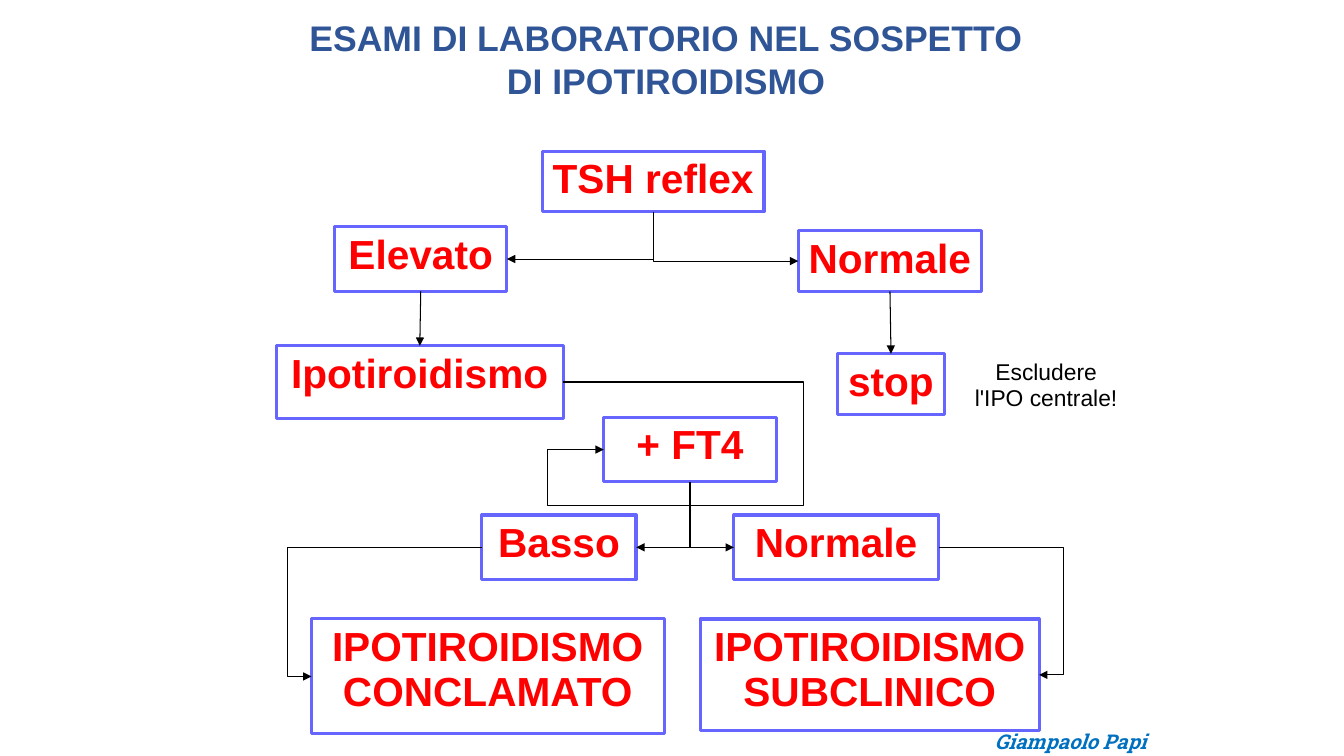
from lxml import etree
from pptx import Presentation
from pptx.dml.color import RGBColor
from pptx.enum.shapes import MSO_CONNECTOR as CONN, MSO_SHAPE
from pptx.enum.text import MSO_ANCHOR, PP_ALIGN
from pptx.oxml.ns import qn
from pptx.util import Pt


def color(hex_code):
    return RGBColor.from_string(hex_code)


def write(sp, lines, size, font, hex_code, bold=False, italic=False,
          align=PP_ALIGN.CENTER, spacing=None, wrap=True, inset=(7.2, 3.6)):
    tf = sp.text_frame
    tf.word_wrap = wrap
    tf.vertical_anchor = MSO_ANCHOR.TOP
    tf.margin_left = tf.margin_right = Pt(inset[0])
    tf.margin_top = tf.margin_bottom = Pt(inset[1])
    for i, line in enumerate(lines):
        p = tf.paragraphs[0] if i == 0 else tf.add_paragraph()
        p.alignment = align
        p.line_spacing = spacing
        r = p.add_run()
        r.text = line
        r.font.size, r.font.name = Pt(size), font
        r.font.bold, r.font.italic = bold, italic
        r.font.color.rgb = color(hex_code)


prs = Presentation()
prs.slide_width, prs.slide_height = Pt(960), Pt(540)
s = prs.slides.add_slide(prs.slide_layouts[6])

# Flowchart boxes: key, text, left, top, width, height, wrap
boxes = {}
for key, text, x, y, w, h, wrap in [
    ("tsh", "TSH reflex", 387.4, 108, 158.4, 43.2, False),
    ("high", "Elevato", 239, 162, 123.1, 46.1, True),
    ("normal", "Normale", 570.2, 164.9, 131, 43.2, False),
    ("hypo", "Ipotiroidismo", 197.3, 247, 205.2, 51.8, True),
    ("ft4", "+ FT4", 431.3, 298.1, 123.1, 46.1, True),
    ("ft4_low", "Basso", 344.2, 367.9, 110.2, 46.1, True),
    ("ft4_normal", "Normale", 524.2, 367.9, 146.2, 46.1, True),
    ("stop", "stop", 598.3, 252.7, 76.3, 43.2, False),
    ("overt", "IPOTIROIDISMO CONCLAMATO", 222.5, 442.1, 252, 82.1, True),
    ("subclinical", "IPOTIROIDISMO SUBCLINICO", 500.4, 442.1, 241.9, 79.9, True),
]:
    sp = s.shapes.add_shape(MSO_SHAPE.RECTANGLE, Pt(x), Pt(y), Pt(w), Pt(h))
    sp.shadow.inherit = False
    sp.fill.background()
    sp.line.color.rgb = color("6666FF")
    sp.line.width = Pt(2.3)
    write(sp, [text], 29, "Arial", "FF0000", bold=True, spacing=0.93,
          wrap=wrap, inset=(7.2, 4.3))
    boxes[key] = sp

# Arrows: from box and side, to box and side, preset, bend positions in 1/100000
TOP, LEFT, BOTTOM, RIGHT = range(4)
for start, side1, end, side2, preset, bends in [
    ("tsh", BOTTOM, "high", RIGHT, "bentConnector2", []),
    ("tsh", BOTTOM, "normal", LEFT, "bentConnector2", []),
    ("high", BOTTOM, "hypo", TOP, "line", []),
    ("normal", BOTTOM, "stop", TOP, "line", []),
    ("hypo", RIGHT, "ft4", LEFT, "bentConnector5", [594700, 182700, -39100]),
    ("ft4", BOTTOM, "ft4_low", RIGHT, "bentConnector2", []),
    ("ft4", BOTTOM, "ft4_normal", LEFT, "bentConnector2", []),
    ("ft4_low", LEFT, "overt", LEFT, "bentConnector3", [114200]),
    ("ft4_normal", RIGHT, "subclinical", RIGHT, "bentConnector3", [124000]),
]:
    kind = CONN.STRAIGHT if preset == "line" else CONN.ELBOW
    c = s.shapes.add_connector(kind, 0, 0, 0, 0)
    c.begin_connect(boxes[start], side1)
    c.end_connect(boxes[end], side2)
    c.line.color.rgb = color("000000")
    c.line.width = Pt(0.75)
    etree.SubElement(c.line._get_or_add_ln(), qn("a:tailEnd"), type="triangle")
    spPr = c._element.spPr
    etree.SubElement(spPr, qn("a:effectLst"))
    geom = spPr.find(qn("a:prstGeom"))
    geom.set("prst", preset)
    for i, bend in enumerate(bends, 1):
        etree.SubElement(geom.find(qn("a:avLst")), qn("a:gd"),
                         name=f"adj{i}", fmla=f"val {bend}")

    # A single bend that leaves downwards is a quarter turn of the preset
    if preset == "bentConnector2":
        to_right = c.end_x > c.begin_x
        x, y, w, h = c.left, c.top, c.width, c.height
        c.left, c.top = x + (w - h) // 2, y + (h - w) // 2
        c.width, c.height = h, w
        xfrm = spPr.find(qn("a:xfrm"))
        xfrm.set("rot", "16200000" if to_right else "5400000")
        xfrm.set("flipH", "1" if to_right else "0")

# Side note
note = s.shapes.add_textbox(Pt(685.4), Pt(254.2), Pt(123.8), Pt(43.9))
write(note, ["Escludere", "l'IPO centrale!"], 16.3, "Arial", "000000",
      spacing=0.93, inset=(6.5, 3.2))

# Title
title = s.shapes.add_textbox(Pt(212.4), Pt(7.9), Pt(527), Pt(68.4))
write(title, ["ESAMI DI LABORATORIO NEL SOSPETTO", "DI IPOTIROIDISMO"], 25.4,
      "Arial", "2F5597", bold=True, wrap=False, inset=(6.5, 3.6))

# Author
author = s.shapes.add_textbox(Pt(703.4), Pt(517), Pt(137.5), Pt(25.2))
write(author, ["Giampaolo Papi"], 14.5, "Roboto Slab", "0070C0", bold=True,
      italic=True, align=PP_ALIGN.LEFT, wrap=False)

prs.save("out.pptx")
